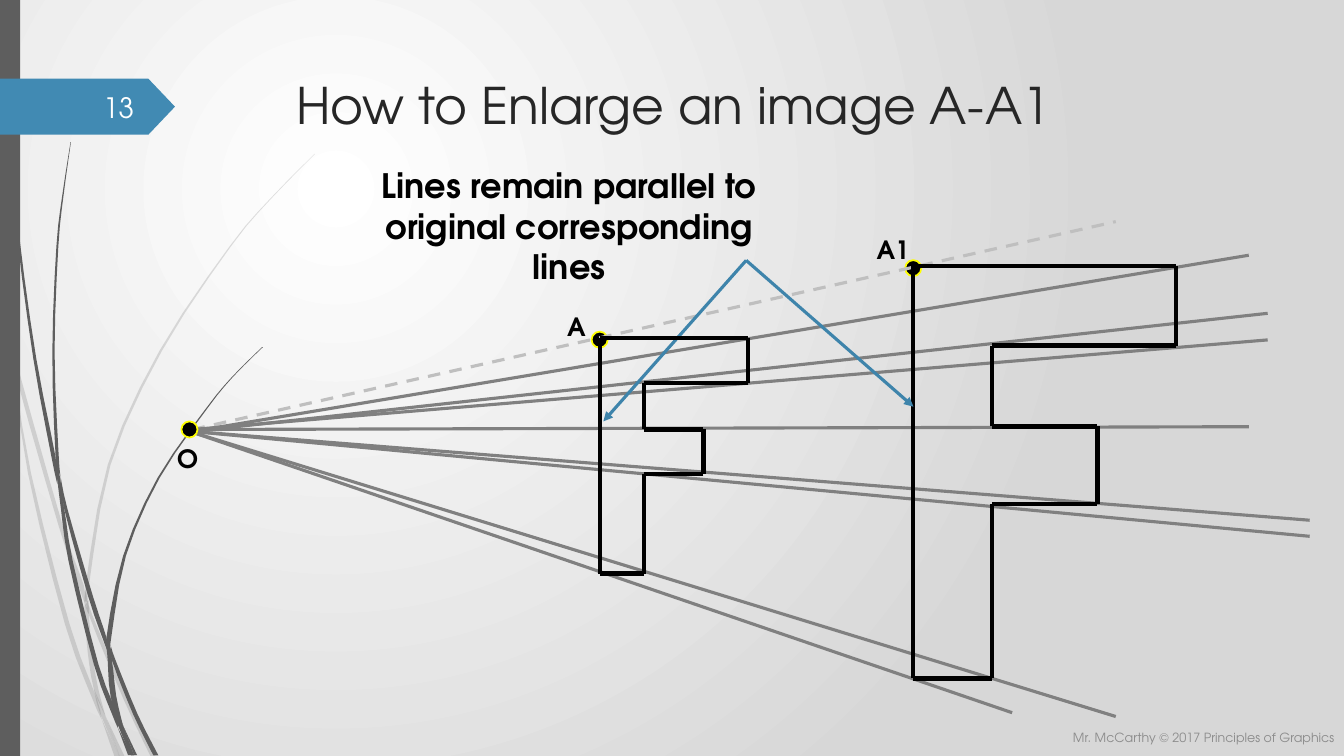
from collections import namedtuple
from itertools import pairwise

from lxml.etree import SubElement
from pptx import Presentation
from pptx.dml.color import RGBColor
from pptx.enum.dml import MSO_LINE_DASH_STYLE as Dash
from pptx.enum.shapes import MSO_CONNECTOR as Connector, MSO_SHAPE as Shape
from pptx.enum.text import MSO_ANCHOR as Anchor, MSO_AUTO_SIZE as AutoSize, PP_ALIGN as Align
from pptx.oxml import parse_xml
from pptx.oxml.ns import nsdecls, qn
from pptx.util import Pt

Box = namedtuple("Box", "left top width height")
FONT = "TeX Gyre Adventor"
COLORS = {
    "white": "FFFFFF", "backdrop": "D7D7D7", "strand": "5E5E5E", "tag": "418AB3",
    "number": "FEFFFF", "footer": "8C8C8C", "title": "262626", "black": "000000",
    "dot_edge": "FFFF00", "guide": "BFBFBF", "ray": "808080", "arrow": "3E84AB",
}
LIGHT_STRANDS = [
    [(0, 203, 0), (0, 215, 2.7), (5, 232, 1.5), (7.9, 252, 0)],
    [(10, 248, 0), (12.2, 271, 3), (42, 376, 3), (56, 418, 3.8), (60.5, 431, 0)],
    [(63.4, 429, 0), (63.4, 439, 2.4), (88.5, 500, 3), (108, 541, 3.6)],
    [(75.6, 512, 0), (85.7, 541, 3.6)],
    [(8, 252, 0), (20, 338, 2.2), (46.5, 446, 3.3), (66, 499, 3.2), (72.7, 514, 0)],
    [(60.5, 431, 0), (60.5, 439, 2.9), (62.6, 465, 3), (67, 492, 3.2), (75.6, 512, 0)],
    [(224.6, 110, 0.4), (193, 142, 0.7), (164, 176, 1), (114, 250.5, 1.8), (77, 332, 2),
     (61, 420.5, 2.3), (63.4, 429, 0)],
    [(72.7, 514, 0), (82, 541, 3.6)],
    [(61, 422, 0), (60.5, 431, 2.8), (63.4, 439, 0)],
    [(67, 492, 0), (71.3, 509, 3), (85.5, 541, 0.3)],
]
DARK_STRANDS = [
    [(2.2, 0, 0.7), (5, 79, 0.7), (12.2, 168, 1.5), (23.8, 256, 2.1), (36.7, 326, 2.9),
     (41, 346, 0)],
    [(43.2, 340, 0), (46, 364, 2.3), (63, 426, 3.4), (73.3, 456, 2.9), (76.3, 464, 0)],
    [(79.2, 461.5, 0), (80, 472, 2.7), (95, 510, 3.2), (109.5, 539.5, 3.6)],
    [(41, 343, 0), (43.6, 364, 2.4), (49, 401, 3), (67, 474.5, 3.3), (80, 510, 3.5),
     (84.2, 520, 0)],
    [(50.4, 101.5, 0.3), (44.6, 139, 0.9), (40.3, 176, 1.4), (37.4, 251, 1.6),
     (39.6, 323, 2.2), (43.2, 340, 0)],
    [(87.8, 518, 0), (95.8, 539.5, 2.2)],
    [(39.6, 323, 0), (41, 343, 2.2), (46, 364, 0)],
    [(187.2, 248, 0.6), (166, 269, 0.7), (147, 292, 1), (112.5, 341.5, 1.5), (88, 397, 2),
     (76.3, 454, 3.4), (79.2, 461.5, 0)],
    [(84.2, 520, 0), (91.5, 539.5, 3)],
    [(76.3, 464, 0), (77, 472, 3), (79, 497, 4), (87.8, 518, 0)],
    [(76.3, 454, 0), (76.3, 464, 2.9), (80, 472, 0)],
    [(79, 497, 0), (83.5, 516, 3.6), (93.6, 539.5, 2.2)],
]
RAYS = [(0, 659.5, -148.5), (1.4, 754.5, -124.5), (0, 768, -64), (1.4, 768, -83),
        (0, 754.5, -2), (1.4, 798, 64.8), (1.4, 798, 76.3), (2, 659.5, 205), (2, 585.5, 202.3)]
F_PROFILE = [(0, 0), (1, 0), (1, 0.193), (0.3, 0.193), (0.3, 0.389), (0.7, 0.389),
             (0.7, 0.577), (0.3, 0.577), (0.3, 1), (0, 1)]


def color(name):
    """Return a named colour."""
    return RGBColor.from_string(COLORS[name])


def points(box):
    """Return a box as four lengths."""
    return [Pt(length) for length in box]


def fill_shape(shape, name):
    """Give a shape a plain fill without line or shadow."""
    shape.shadow.inherit = False
    shape.fill.solid()
    shape.fill.fore_color.rgb = color(name)
    shape.line.fill.background()


def add_outline(slide, corners, name):
    """Add a filled outline through the corners."""
    corners = [(Pt(x), Pt(y)) for x, y in corners]
    shape = slide.shapes.build_freeform(*corners[0]).add_line_segments(corners[1:]).convert_to_shape()
    fill_shape(shape, name)
    return shape


def add_line(slide, start, end, name, width, dash=None, arrow=False):
    """Add a straight line, dashed or with an arrowhead on request."""
    line = slide.shapes.add_connector(Connector.STRAIGHT, *points((*start, *end)))
    line.line.color.rgb = color(name)
    line.line.width = Pt(width)
    line.line.dash_style = dash
    properties = line.element.spPr
    if arrow:
        SubElement(properties.find(qn("a:ln")), qn("a:tailEnd"), type="triangle")
    SubElement(properties, qn("a:effectLst"))


def format_text(frame, text, size, name, align=Align.LEFT, bold=False, anchor=Anchor.TOP):
    """Fill a text frame with one formatted paragraph."""
    frame.text = text
    frame.vertical_anchor = anchor
    para = frame.paragraphs[0]
    para.alignment = align
    font = para.runs[0].font
    font.name, font.size, font.bold = FONT, Pt(size), bold
    font.color.rgb = color(name)


def add_text(slide, box, text, size, name, wrap=True, grow=False, **style):
    """Add a text box."""
    frame = slide.shapes.add_textbox(*points(box)).text_frame
    frame.word_wrap = wrap
    frame.auto_size = AutoSize.SHAPE_TO_FIT_TEXT if grow else AutoSize.NONE
    format_text(frame, text, size, name, **style)


def smooth(knots, steps=3):
    """Return points of a smooth curve through the knots."""
    padded = [knots[0], *knots, knots[-1]]
    curve = [tuple(q + t * (r - p) / 2 + t**2 * (2 * p - 5 * q + 4 * r - s) / 2
                   + t**3 * (3 * q - p - 3 * r + s) / 2 for p, q, r, s in zip(*window))
             for window in zip(padded, padded[1:], padded[2:], padded[3:])
             for t in (step / steps for step in range(steps))]
    return [*curve, knots[-1]]


def add_strands(slide, box, strands, opacity):
    """Draw tapered strands, each knot holding left edge, height and width."""
    for strand in strands:
        curve = [(box.left + x, box.top + y, width) for x, y, width in smooth(strand)]
        back = [(x + width, y) for x, y, width in reversed(curve)]
        shape = add_outline(slide, [(x, y) for x, y, _ in curve] + back, "strand")
        tint = shape.element.spPr.find(qn("a:solidFill"))[0]
        SubElement(tint, qn("a:alpha"), val=str(opacity * 1000))


def add_backdrop(slide, box):
    """Paint the radial background, the strands and the side bar."""
    fill = slide.background.fill
    fill.gradient()
    for stop, name in zip(fill.gradient_stops, ("white", "backdrop")):
        stop.color.rgb = color(name)
    gradient = slide.element.find(".//" + qn("a:gradFill"))
    gradient.replace(gradient.find(qn("a:lin")), parse_xml(
        f'<a:path {nsdecls("a")} path="circle">'
        '<a:fillToRect l="50000" t="50000" r="100000" b="100000"/></a:path>'))
    add_strands(slide, box, LIGHT_STRANDS, 20)
    add_strands(slide, box, DARK_STRANDS, 100)
    bar = slide.shapes.add_shape(Shape.RECTANGLE, *points((box.left, box.top, 14.4, box.height)))
    fill_shape(bar, "strand")


def add_number_tag(slide, box, number):
    """Draw the pointed tag with the slide number."""
    left, top, width, height = box
    shoulder, bottom = left + width - 19, top + height
    add_outline(slide, [(left, top), (shoulder, top), (left + width, top + height / 2),
                        (shoulder, bottom), (left, bottom)], "tag")
    add_text(slide, Box(left + 41.8, top + 5.7, 61.2, 28.8), number, 20, "number",
             align=Align.RIGHT, anchor=Anchor.MIDDLE)


def add_title(slide, box, text):
    """Place and format the title."""
    title = slide.shapes.title
    title.left, title.top, title.width, title.height = points(box)
    title.text_frame.auto_size = AutoSize.NONE
    format_text(title.text_frame, text, 36, "title")


def add_dot(slide, box, label, label_box):
    """Draw a marked point and its letter."""
    dot = slide.shapes.add_shape(Shape.OVAL, *points(box))
    fill_shape(dot, "black")
    dot.line.color.rgb = color("dot_edge")
    dot.line.width = Pt(1.25)
    add_text(slide, label_box, label, 18, "black", wrap=False, grow=True, bold=True)


def add_rays(slide, x, y):
    """Draw the dashed guide and the rays from the centre."""
    for index, (drop, run, rise) in enumerate(RAYS):
        name, dash = ("ray", None) if index else ("guide", Dash.DASH)
        add_line(slide, (x, y + drop), (x + run, y + rise), name, 2.25, dash)


def add_letter(slide, box):
    """Draw the letter F from lines filling the box."""
    corners = [(box.left + x * box.width, box.top + y * box.height) for x, y in F_PROFILE]
    for start, end in pairwise([*corners, corners[0]]):
        add_line(slide, start, end, "black", 3)


def add_note(slide, box, text):
    """Add the note and its arrows to the matching sides."""
    add_text(slide, box, text, 24, "black", grow=True, align=Align.CENTER, bold=True)
    x, y = box.left + 283, box.top + 71.5
    for dx, dy in ((119.5, 104.5), (-102, 115)):
        add_line(slide, (x, y), (x + dx, y + dy), "arrow", 2.25, arrow=True)


def main():
    """Build the slide and save it."""
    deck = Presentation()
    deck.slide_width, deck.slide_height = Pt(960), Pt(540)
    slide = deck.slides.add_slide(deck.slide_layouts[5])
    add_backdrop(slide, Box(0, 0, 960, 540))
    add_number_tag(slide, Box(0, 56.2, 125, 40), "13")
    add_text(slide, Box(700.5, 513.5, 259.5, 26.5), "Mr. McCarthy © 2017 Principles of Graphics",
             9, "footer", align=Align.RIGHT, anchor=Anchor.MIDDLE)
    add_title(slide, Box(204.5, 49, 702, 55.5), "How to Enlarge an image A-A1")
    add_dot(slide, Box(422.6, 236.9, 11.5, 11.5), "A", Box(398, 219, 28, 29))
    add_dot(slide, Box(646.6, 185.8, 11.5, 11.5), "A1", Box(619, 164, 38, 29))
    add_rays(slide, 137.5, 306.8)
    add_dot(slide, Box(129.6, 301, 11.5, 11.5), "O", Box(119.5, 313, 29.5, 29))
    add_letter(slide, Box(652.3, 190, 188, 294.6))
    add_note(slide, Box(250, 114.5, 313, 94.5), "Lines remain parallel to original corresponding lines")
    add_letter(slide, Box(428.4, 241.2, 105.8, 168.5))
    deck.save("out.pptx")


if __name__ == "__main__":
    main()
